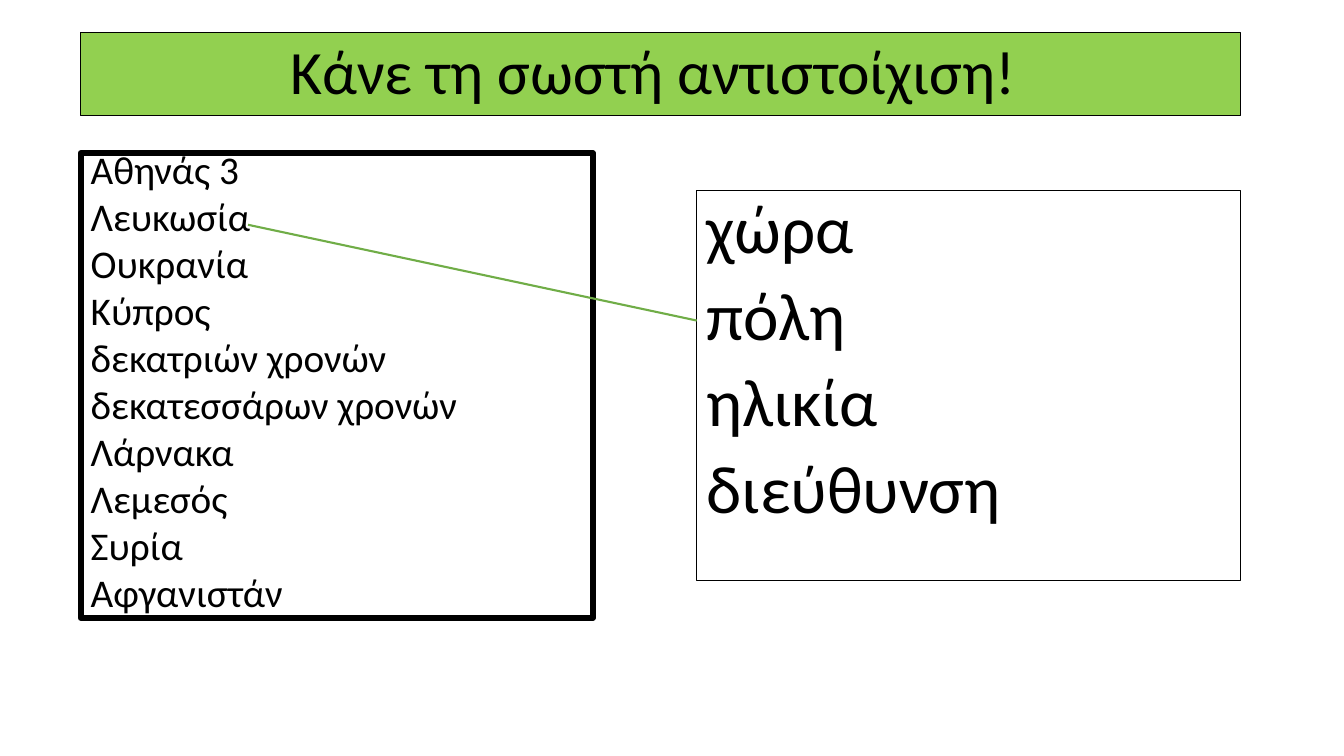
from lxml.etree import SubElement
from pptx import Presentation
from pptx.dml.color import RGBColor
from pptx.enum.shapes import MSO_CONNECTOR as CONN
from pptx.enum.text import MSO_ANCHOR as ANCHOR, MSO_AUTO_SIZE as AUTO, PP_ALIGN as ALIGN
from pptx.oxml.ns import qn
from pptx.util import Pt

PX = 9144
BLACK, GREEN, LEAF = "000000", "92D050", "70AD47"


def px(*values):
    return [v * PX for v in values]


def rgb(value):
    return RGBColor.from_string(value)


def apply(obj, formats):
    for name, value in formats.items():
        setattr(obj, name, value)


class Board:
    font = "Calibri"

    def __init__(self, prs):
        self.slide = prs.slides.add_slide(prs.slide_layouts[1])

    def frame(self, sp, box, weight, fill=None):
        apply(sp, dict(zip(("left", "top", "width", "height"), px(*box))))
        if fill:
            sp.fill.solid()
            sp.fill.fore_color.rgb = rgb(fill)
        sp.line.color.rgb = rgb(BLACK)
        sp.line.width = Pt(weight)

    def add_lines(self, sp, lines, size, spacing, anchor=ANCHOR.TOP, align=ALIGN.LEFT):
        tf = sp.text_frame
        apply(tf, {"word_wrap": True, "auto_size": AUTO.NONE, "vertical_anchor": anchor})
        for i, line in enumerate(lines):
            p = tf.add_paragraph() if i else tf.paragraphs[0]
            pPr = p._p.get_or_add_pPr()
            for name in ("marL", "indent"):
                pPr.set(name, "0")
            SubElement(pPr, qn("a:buNone"))
            apply(p, {"alignment": align, "line_spacing": spacing,
                      "space_before": Pt(10 if i else 0)})
            r = p.add_run()
            r.text = line
            apply(r.font, {"name": self.font, "size": Pt(size)})
            r.font.color.rgb = rgb(BLACK)

    def title(self, text, box):
        sp = self.slide.shapes.title
        self.frame(sp, box, 0.75, GREEN)
        self.add_lines(sp, [text], 44, 0.9, ANCHOR.MIDDLE, ALIGN.CENTER)

    def body(self, lines, box):
        sp = self.slide.placeholders[1]
        self.frame(sp, box, 4.5)
        self.add_lines(sp, lines, 28, 0.7)

    def text_box(self, lines, box):
        sp = self.slide.shapes.add_textbox(*px(*box))
        self.frame(sp, box, 0.75)
        self.add_lines(sp, lines, 48, 0.9)

    def match(self, start, end):
        sp = self.slide.shapes.add_connector(CONN.STRAIGHT, *px(*start, *end))
        sp.line.color.rgb = rgb(LEAF)
        sp.line.width = Pt(1.5)
        SubElement(sp._element.spPr, qn("a:effectLst"))


def main():
    prs = Presentation()
    prs.slide_width, prs.slide_height = px(1333, 750)
    board = Board(prs)
    board.title("Κάνε τη σωστή αντιστοίχιση! ", (80, 32, 1150, 83))
    board.body(["Αθηνάς 3", "Λευκωσία", "Ουκρανία", "Κύπρος", "δεκατριών χρονών",
                "δεκατεσσάρων χρονών", "Λάρνακα", "Λεμεσός", "Συρία", "Αφγανιστάν"],
               (80, 152, 508, 461))
    board.text_box(["χώρα", "πόλη", "ηλικία", "διεύθυνση"], (691, 189, 539, 387))
    board.match((246, 223), (691, 318))
    prs.save("out.pptx")


if __name__ == "__main__":
    main()
